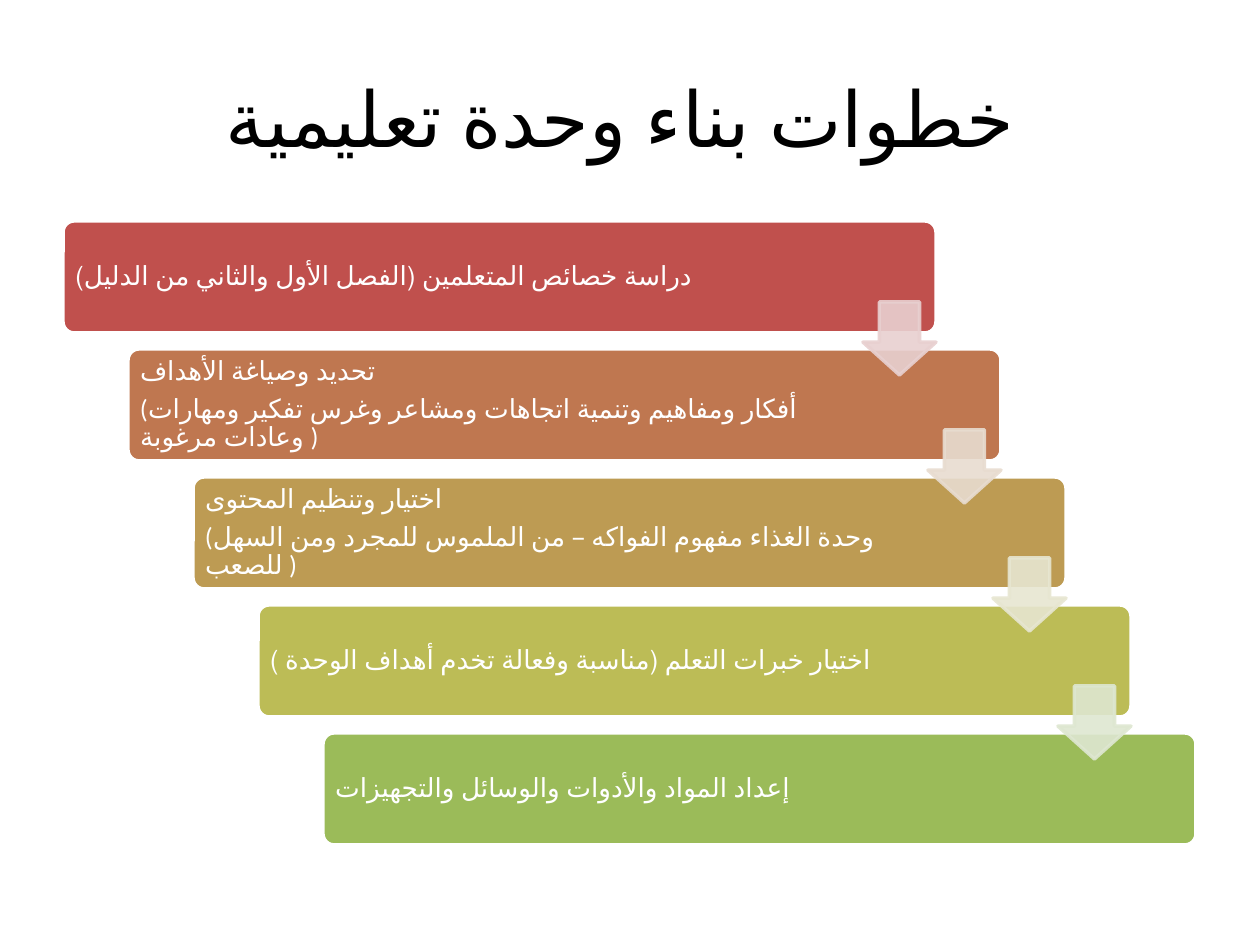
import pptx
import pptx.util
import pptx.dml.color
import pptx.enum.lang
import pptx.enum.shapes
import pptx.enum.text
import pptx.oxml.ns
import lxml.etree

TITLE = "خطوات بناء وحدة تعليمية "
STEPS = [
    ["دراسة خصائص المتعلمين (الفصل الأول والثاني من الدليل)"],
    ["تحديد وصياغة الأهداف",
     "(أفكار ومفاهيم وتنمية اتجاهات ومشاعر وغرس تفكير ومهارات وعادات مرغوبة )"],
    ["اختيار وتنظيم المحتوى",
     "(وحدة الغذاء مفهوم الفواكه – من الملموس للمجرد ومن السهل للصعب )"],
    ["اختيار خبرات التعلم (مناسبة وفعالة تخدم أهداف الوحدة )"],
    ["إعداد المواد والأدوات والوسائل والتجهيزات"],
]
COLOURS = {
    "title": "000000",
    "white": "FFFFFF",
    "steps": ["C0504D", "BF7750", "BD9B53", "BCBC56", "9BBB59"],
    "arrows": ["E8D0D0", "E8DCD0", "E7E6D1", "DEE7D1"],
}
FONT = "Calibri"
SCALE = 914400 / 126
STEP_X, STEP_Y = 65, 128
BAR = (63, 221, 873, 112)
LABEL = (67, 224, 728, 106)
FIRST_LABEL_WIDTH = 738
ARROW = (863, 302, 73, 73)


def px(value):
    return pptx.util.Emu(round(value * SCALE))


def colour(value):
    return pptx.dml.color.RGBColor.from_string(value)


def stair(place, index):
    left, top, width, height = place
    return [px(v) for v in (left + index * STEP_X, top + index * STEP_Y, width, height)]


def write(para, text, size, shade):
    span = para.add_run()
    span.text = text
    span.font.name = FONT
    span.font.language_id = pptx.enum.lang.MSO_LANGUAGE_ID.ARABIC
    span.font.size = pptx.util.Pt(size)
    span.font.color.rgb = colour(shade)


def add_block(page, kind, place, adjustments, fill, line):
    block = page.shapes.add_shape(kind, *place)
    block.shadow.inherit = False
    for number, value in enumerate(adjustments):
        block.adjustments[number] = value
    block.fill.solid()
    block.fill.fore_color.rgb = colour(fill)
    block.line.color.rgb = colour(line)
    block.line.width = pptx.util.Pt(2)
    return block


def add_label(page, place, lines):
    box = page.shapes.add_textbox(*place)
    frame = box.text_frame
    frame.word_wrap = True
    frame.vertical_anchor = pptx.enum.text.MSO_ANCHOR.MIDDLE
    frame.margin_left = frame.margin_right = px(8)
    frame.margin_top = frame.margin_bottom = px(8)
    for number, text in enumerate(lines):
        para = frame.add_paragraph() if number else frame.paragraphs[0]
        para.line_spacing = 0.9
        para.space_after = pptx.util.Pt(5.5)
        write(para, text, 15, COLOURS["white"])


def add_arrow(page, place, shade):
    kind = pptx.enum.shapes.MSO_SHAPE.DOWN_ARROW
    arrow = add_block(page, kind, place, (0.55, 0.45), shade, shade)
    qn = pptx.oxml.ns.qn
    for tint in arrow.element.spPr.iter(qn("a:srgbClr")):
        lxml.etree.SubElement(tint, qn("a:alpha")).set("val", "90000")


def main():
    deck = pptx.Presentation()
    deck.slide_width, deck.slide_height = px(1260), px(945)
    page = deck.slides.add_slide(deck.slide_layouts[5])

    title = page.shapes.title
    title.left, title.top, title.width, title.height = map(px, (63, 38, 1134, 157))
    title.text_frame.vertical_anchor = pptx.enum.text.MSO_ANCHOR.MIDDLE
    heading = title.text_frame.paragraphs[0]
    heading.alignment = pptx.enum.text.PP_ALIGN.CENTER
    write(heading, TITLE, 44, COLOURS["title"])

    rounded = pptx.enum.shapes.MSO_SHAPE.ROUNDED_RECTANGLE
    for index, (lines, fill) in enumerate(zip(STEPS, COLOURS["steps"])):
        add_block(page, rounded, stair(BAR, index), (0.1,), fill, COLOURS["white"])
        place = stair(LABEL, index)
        if index == 0:
            place[2] = px(FIRST_LABEL_WIDTH)
        add_label(page, place, lines)
    for index, shade in enumerate(COLOURS["arrows"]):
        add_arrow(page, stair(ARROW, index), shade)

    deck.save("out.pptx")


if __name__ == "__main__":
    main()
